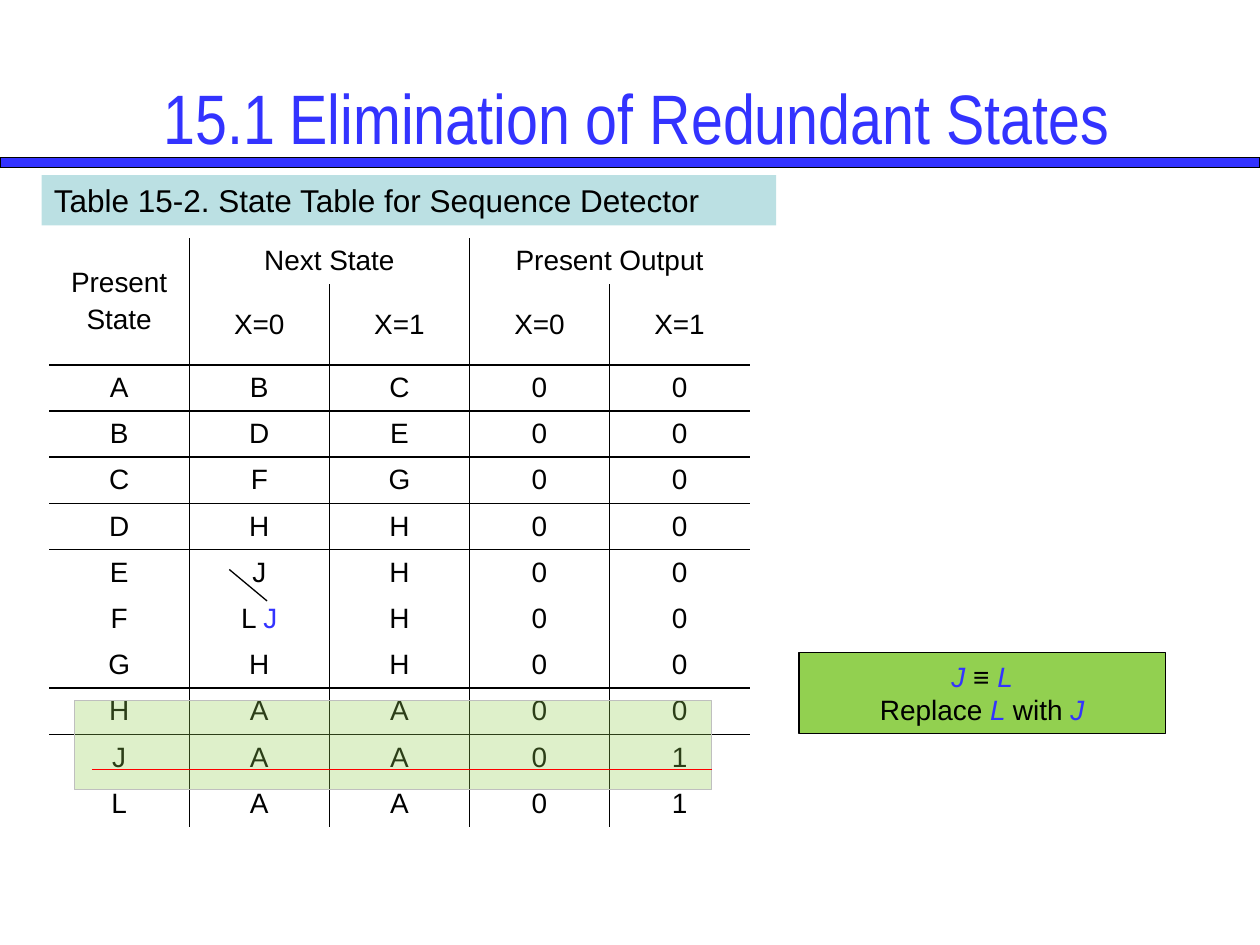
from lxml.etree import SubElement
from pptx import Presentation
from pptx.dml.color import RGBColor
from pptx.enum.shapes import MSO_CONNECTOR, MSO_SHAPE
from pptx.enum.text import MSO_ANCHOR, PP_ALIGN
from pptx.oxml.ns import qn
from pptx.util import Inches, Pt

W, H = 10, 7.5
COLORS = {"black": "000000", "blue": "3333FF", "teal": "BBE0E3",
          "green": "92D050", "gray": "BFBFBF", "red": "FF0000"}
TITLE = "15.1\tElimination of Redundant States"
CAPTION = "Table 15-2. State Table for Sequence Detector"
HEADER = [["Present\nState", "Next State", "", "Present Output", ""],
          ["", "X=0", "X=1", "X=0", "X=1"]]
STATES = ["A B C 0 0", "B D E 0 0", "C F G 0 0", "D H H 0 0", "E J H 0 0",
          "F L_J H 0 0", "G H H 0 0", "H A A 0 0", "J A A 0 1", "L A A 0 1"]
MERGES = [((0, 0), (1, 0)), ((0, 1), (0, 2)), ((0, 3), (0, 4))]
RULED_ROWS, RULED_COLS = {1, 2, 4, 8}, {0, 2}   # line below / line to the right
# Each run: text, colour, italic
NOTE = [[("J ", "blue", True), ("≡", "black", True), (" L", "blue", True)],
        [("Replace ", "black", False), ("L ", "blue", True),
         ("with ", "black", False), ("J", "blue", True)]]
TABLE = (0.39, 1.89, 5.56, 4.4)
NO_GRID_STYLE = "{2D5ABB26-0587-4C30-8999-92F81FD0307C}"


def rgb(name):
    return RGBColor.from_string(COLORS[name])


def style(r, size, color="black", font="Arial", italic=None):
    r.font.size, r.font.name, r.font.italic = Pt(size), font, italic
    r.font.color.rgb = rgb(color)


def add_box(s, at, fill, line=None, width=0.75):
    sp = s.shapes.add_shape(MSO_SHAPE.RECTANGLE, *map(Inches, at))
    sp.shadow.inherit = False
    sp.fill.solid()
    sp.fill.fore_color.rgb = rgb(fill)
    if line:
        sp.line.color.rgb, sp.line.width = rgb(line), Pt(width)
    else:
        sp.line.fill.background()
    sp.text_frame.word_wrap = True
    return sp


def add_line(s, start, end, color):
    c = s.shapes.add_connector(MSO_CONNECTOR.STRAIGHT, *map(Inches, start + end))
    c.line.color.rgb, c.line.width = rgb(color), Pt(0.75)
    SubElement(c._element.spPr, qn("a:effectLst"))


def add_border(cell, side):
    ln = SubElement(cell._tc.get_or_add_tcPr(), qn(f"a:{side}"), w=str(Pt(1)))
    fill = SubElement(ln, qn("a:solidFill"))
    SubElement(fill, qn("a:srgbClr"), val=COLORS["black"])


def fill_cell(cell, text):
    cell.vertical_anchor = MSO_ANCHOR.MIDDLE
    cell.text_frame.text = text
    for i, p in enumerate(cell.text_frame.paragraphs):
        p.alignment = PP_ALIGN.CENTER
        if i:
            p.space_before = Pt(3.2)
        for r in p.runs:
            style(r, 16)


def add_state_table(s):
    rows = HEADER + [line.split() for line in STATES]
    n_rows, n_cols = len(rows), len(rows[0])
    frame = s.shapes.add_table(n_rows, n_cols, *map(Inches, TABLE))
    table = frame.table
    table.first_row = table.horz_banding = False
    table._tbl.tblPr.find(qn("a:tableStyleId")).text = NO_GRID_STYLE
    for col in table.columns:
        col.width = Inches(TABLE[2] / n_cols)
    for row in table.rows:
        row.height = Inches(TABLE[3] / n_rows)
    for first, last in MERGES:
        table.cell(*first).merge(table.cell(*last))
    for i, row in enumerate(rows):
        for j, text in enumerate(row):
            cell = table.cell(i, j)
            old, _, new = text.partition("_")
            fill_cell(cell, old + " " if new else old)
            if new:
                r = cell.text_frame.paragraphs[0].add_run()
                r.text = new
                style(r, 16, "blue")
            # Borders go in schema order, on both sides of a shared edge
            for side, ruled in (("lnL", j - 1 in RULED_COLS),
                                ("lnR", j in RULED_COLS or (i, j) == (0, 1)),
                                ("lnT", i - 1 in RULED_ROWS),
                                ("lnB", i in RULED_ROWS or (i, j) == (0, 0))):
                if ruled:
                    add_border(cell, side)
            cell.fill.background()


def main():
    prs = Presentation()
    prs.slide_width, prs.slide_height = Inches(W), Inches(H)
    s = prs.slides.add_slide(prs.slide_layouts[6])

    add_box(s, (0, 1.25, W, 0.08), "blue", "black")
    add_state_table(s)

    tf = s.shapes.add_textbox(*map(Inches, (0.3, 0.3, 9.5, 1.25))).text_frame
    tf.word_wrap, tf.vertical_anchor = True, MSO_ANCHOR.MIDDLE
    p = tf.paragraphs[0]
    p.text, p.alignment = TITLE, PP_ALIGN.CENTER
    style(p.runs[0], 40, "blue", "Arial Narrow")

    p = add_box(s, (0.33, 1.39, 5.83, 0.4), "teal").text_frame.paragraphs[0]
    p.text, p.alignment = CAPTION, PP_ALIGN.LEFT
    style(p.runs[0], 18)

    band = add_box(s, (0.59, 5.56, 5.06, 0.71), "green", "gray", 0.5)
    color = band._element.spPr.find(qn("a:solidFill"))[0]
    SubElement(color, qn("a:alpha"), val="30000")
    add_line(s, (1.82, 4.52), (2.12, 4.77), "black")
    add_line(s, (0.73, 6.11), (5.65, 6.11), "red")

    tf = add_box(s, (6.34, 5.18, 2.91, 0.64), "green", "black").text_frame
    for i, runs in enumerate(NOTE):
        p = tf.add_paragraph() if i else tf.paragraphs[0]
        p.alignment = PP_ALIGN.CENTER
        for text, color, italic in runs:
            r = p.add_run()
            r.text = text
            style(r, 16, color, italic=italic)

    prs.save("out.pptx")


if __name__ == "__main__":
    main()
